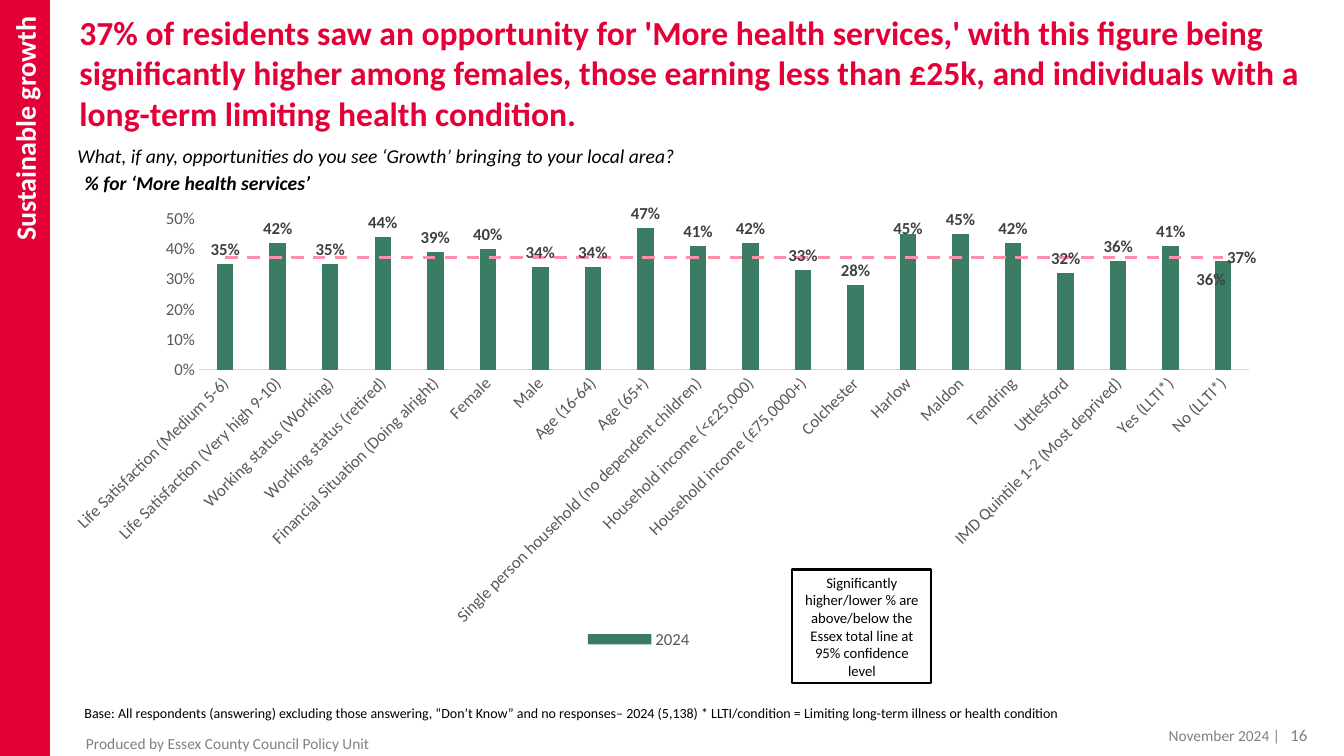
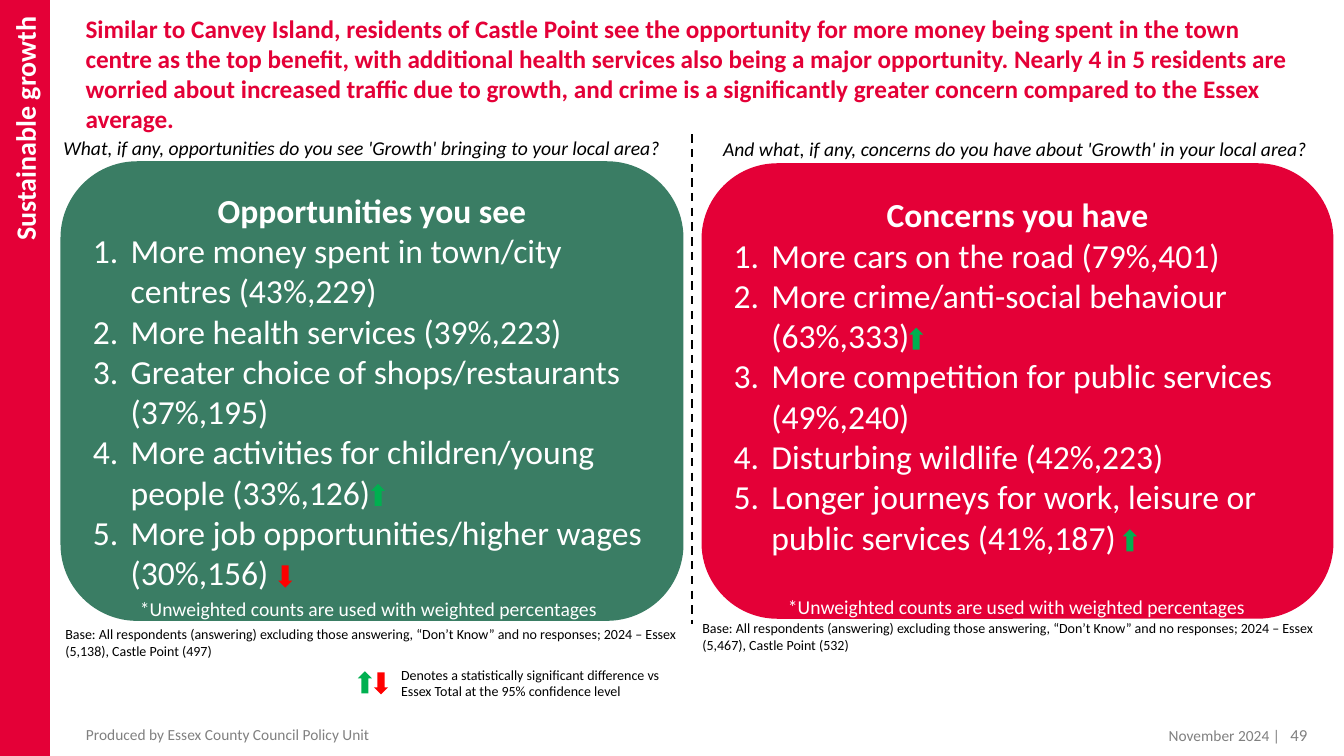
import pptx
import pptx.util
import pptx.chart.data
import pptx.dml.color
import pptx.enum.chart
import pptx.enum.dml
import pptx.enum.shapes
import pptx.enum.text
import pptx.oxml
import pptx.oxml.ns

Pt = pptx.util.Pt
RGB = pptx.dml.color.RGBColor.from_string
qn = pptx.oxml.ns.qn
MSO = pptx.enum.shapes.MSO_SHAPE
ALIGN = pptx.enum.text.PP_ALIGN
ANCHOR = pptx.enum.text.MSO_ANCHOR
LABEL = pptx.enum.chart.XL_LABEL_POSITION
TICK = pptx.enum.chart.XL_TICK_MARK
DASH = pptx.enum.dml.MSO_LINE.DASH


class Theme:
    font = "Calibri"
    red, green, pink = "E40037", "3A7D64", "FF8EA9"
    up, down = "00B050", "FF0000"
    black, white, grey = "000000", "FFFFFF", "808080"
    axis, value, rule = "595959", "404040", "D9D9D9"
    heading, long_heading, band, panel = 24, 18, 20, 24
    question, chart, footer, page, note, small = 14, 12, 11, 12, 10.5, 10


def put(s, at, kind=None, fill=None, line=None, width=1):
    """Add a text box, or a preset shape when a kind is given."""
    box = [Pt(v) for v in at]
    if kind is None:
        return s.shapes.add_textbox(*box)
    sp = s.shapes.add_shape(kind, *box)
    sp.shadow.inherit = False
    if fill:
        sp.fill.solid()
        sp.fill.fore_color.rgb = RGB(fill)
    else:
        sp.fill.background()
    if line:
        sp.line.color.rgb = RGB(line)
        sp.line.width = Pt(width)
    else:
        sp.line.fill.background()
    return sp


def write(sp, text, size, color=Theme.black, bold=False, italic=False,
          align=ALIGN.LEFT, anchor=ANCHOR.TOP, ins=(7.2, 3.6, 7.2, 3.6)):
    tf = sp.text_frame
    tf.word_wrap = True
    tf.vertical_anchor = anchor
    tf.margin_left, tf.margin_top, tf.margin_right, tf.margin_bottom = map(Pt, ins)
    tf.text = text
    for p in tf.paragraphs:
        p.alignment = align
        for r in p.runs:
            r.font.name, r.font.size = Theme.font, Pt(size)
            r.font.color.rgb = RGB(color)
            r.font.bold, r.font.italic = bold, italic
    return tf


prs = pptx.Presentation()
prs.slide_width, prs.slide_height = Pt(960), Pt(540)

# Shared parts: heading, side band, footers
pages = [
    ("37% of residents saw an opportunity for 'More health services,' with this figure being "
     "significantly higher among females, those earning less than £25k, and individuals with a "
     "long-term limiting health condition.",
     (49.7, 5, 904.3, 71.3), Theme.heading, 525.6, "16"),
    ("Similar to Canvey Island, residents of Castle Point see the opportunity for more money being "
     "spent in the town centre as the top benefit, with additional health services also being a "
     "major opportunity. Nearly 4 in 5 residents are worried about increased traffic due to growth, "
     "and crime is a significantly greater concern compared to the Essex average.",
     (54, 5.8, 882, 81.4), Theme.long_heading, 519.1, "49"),
]
for heading, at, size, producer_top, number in pages:
    s = prs.slides.add_slide(prs.slide_layouts[6])
    write(put(s, at), heading, size, Theme.red, bold=True, ins=(7.2, 3.6, 7.2, 0))
    band = put(s, (0, 0, 35.3, 540), MSO.RECTANGLE, Theme.red, Theme.red)
    tf = write(band, "Sustainable growth ", Theme.band, Theme.white, bold=True,
               align=ALIGN.RIGHT, anchor=ANCHOR.MIDDLE, ins=(7.2, 7.2, 7.2, 3.6))
    tf._txBody.bodyPr.set("vert", "vert270")
    write(put(s, (61.4, producer_top, 464, 10.8)), "Produced by Essex County Council Policy Unit",
          Theme.footer, Theme.grey, anchor=ANCHOR.MIDDLE, ins=(0, 3.6, 7.2, 3.6))
    write(put(s, (748.7, 514.8, 172.8, 10.8)), "November 2024 |", Theme.footer, Theme.grey,
          align=ALIGN.RIGHT)
    write(put(s, (872.6, 519.1, 61.2, 10.8)), number, Theme.page, Theme.grey,
          align=ALIGN.RIGHT, anchor=ANCHOR.MIDDLE, ins=(7.2, 3.6, 0, 3.6))

# Slide 1: question, base and significance note
s = prs.slides[0]
write(put(s, (48.2, 99.4, 869, 24.5)),
      "What, if any, opportunities do you see ‘Growth’ bringing to your local area?",
      Theme.question, italic=True)
write(put(s, (53.3, 118.8, 432.7, 24.5)), "% for ‘More health services’",
      Theme.question, bold=True, italic=True)
write(put(s, (53.3, 499.7, 770.4, 19.4)),
      "Base: All respondents (answering) excluding those answering, “Don’t Know” and no responses– "
      "2024 (5,138) * LLTI/condition = Limiting long-term illness or health condition", Theme.small)

# Slide 1: columns by group
groups = [
    ("Life Satisfaction (Medium 5-6)", 0.35), ("Life Satisfaction (Very high 9-10)", 0.42),
    ("Working status (Working)", 0.35), ("Working status (retired)", 0.44),
    ("Financial Situation (Doing alright)", 0.39), ("Female", 0.40), ("Male", 0.34),
    ("Age (16-64)", 0.34), ("Age (65+)", 0.47),
    ("Single person household (no dependent children)", 0.41),
    ("Household income (<£25,000)", 0.42), ("Household income (£75,0000+)", 0.33),
    ("Colchester", 0.28), ("Harlow", 0.45), ("Maldon", 0.45), ("Tendring", 0.42),
    ("Uttlesford", 0.32), ("IMD Quintile 1-2 (Most deprived)", 0.36),
    ("Yes (LLTI*)", 0.41), ("No (LLTI*)", 0.36),
]
last = len(groups) - 1
data = pptx.chart.data.CategoryChartData(number_format="0%")
data.categories = [name for name, _ in groups]
data.add_series("2024", [share for _, share in groups])
data.add_series("Essex Total", [0.37] * len(groups))
chart = s.shapes.add_chart(pptx.enum.chart.XL_CHART_TYPE.COLUMN_CLUSTERED,
                           Pt(37.4), Pt(142.6), Pt(872.6), Pt(337.7), data).chart
chart.has_title = False
chart.font.name, chart.font.size = Theme.font, Pt(Theme.chart)
chart.font.color.rgb = RGB(Theme.axis)

cat, val = chart.category_axis, chart.value_axis
cat.major_tick_mark = val.major_tick_mark = TICK.NONE
cat.format.line.color.rgb = RGB(Theme.rule)
cat.format.line.width = Pt(0.75)
cat.tick_labels.font.size = Pt(Theme.chart)
cat._element.find(qn("c:txPr")).find(qn("a:bodyPr")).set("rot", "-2700000")
val.has_major_gridlines = False
val.format.line.fill.background()
val.minimum_scale, val.maximum_scale, val.major_unit = 0, 0.5, 0.1
val.tick_labels.number_format = "0%"
val.tick_labels.number_format_is_linked = False

plot = chart.plots[0]
plot.gap_width = 219
plot.vary_by_categories = False

# Slide 1: the Essex total becomes a line on the same axes
bar = plot._element
line = pptx.oxml.parse_xml(
    '<c:lineChart xmlns:c="http://schemas.openxmlformats.org/drawingml/2006/chart">'
    '<c:grouping val="standard"/><c:varyColors val="0"/><c:marker val="1"/></c:lineChart>')
ser = bar.findall(qn("c:ser"))[1]
for flag in ser.findall(qn("c:invertIfNegative")):
    ser.remove(flag)
line.insert(2, ser)
for ax in bar.findall(qn("c:axId")):
    line.append(pptx.oxml.parse_xml(
        '<c:axId xmlns:c="http://schemas.openxmlformats.org/drawingml/2006/chart" val="%s"/>'
        % ax.get("val")))
bar.addnext(line)

columns, total = chart.plots[0].series[0], chart.plots[1].series[0]
columns.format.fill.solid()
columns.format.fill.fore_color.rgb = RGB(Theme.green)
total.smooth = False
total.marker.style = pptx.enum.chart.XL_MARKER_STYLE.NONE
total.format.line.color.rgb = RGB(Theme.pink)
total.format.line.width = Pt(2.25)
total.format.line.dash_style = DASH

# Slide 1: value labels
columns.data_labels.show_value = True
columns.data_labels.number_format = "0%"
columns.data_labels.number_format_is_linked = False
total.data_labels.show_value = False
harlow, no_llti = (columns.points[i].data_label for i in (13, last))
essex = total.points[last].data_label
for label, place in ((columns.data_labels, LABEL.OUTSIDE_END), (harlow, LABEL.OUTSIDE_END),
                     (no_llti, LABEL.OUTSIDE_END), (essex, LABEL.RIGHT)):
    label.position = place
    label.font.name, label.font.size = Theme.font, Pt(Theme.chart)
    label.font.bold = True
    label.font.color.rgb = RGB(Theme.value)

# Slide 1: legend without the total, and fixed places inside the chart
chart.has_legend = True
legend = chart.legend
legend.position = pptx.enum.chart.XL_LEGEND_POSITION.BOTTOM
legend.include_in_layout = False
legend.font.size = Pt(Theme.chart)
legend.font.color.rgb = RGB(Theme.axis)
legend._element.find(qn("c:legendPos")).addnext(pptx.oxml.parse_xml(
    '<c:legendEntry xmlns:c="http://schemas.openxmlformats.org/drawingml/2006/chart">'
    '<c:idx val="1"/><c:delete val="1"/></c:legendEntry>'))
edge = [("xMode", "edge"), ("yMode", "edge")]
moved = {lbl.find(qn("c:idx")).get("val"): lbl for lbl in columns._element.iter(qn("c:dLbl"))}
for parent, index, settings in (
        (bar.getparent(), 0, [("layoutTarget", "inner")] + edge
         + [("x", 0.12), ("y", 0.04), ("w", 0.86), ("h", 0.32)]),
        (legend._element, 2, edge + [("x", 0.43), ("y", 0.9), ("w", 0.1), ("h", 0.06)]),
        (moved["13"], 1, [("x", 0), ("y", 0.02)]),
        (moved[str(last)], 1, [("x", -0.01), ("y", 0.07)])):
    for old in parent.findall(qn("c:layout")):
        parent.remove(old)
    parent.insert(index, pptx.oxml.parse_xml(
        '<c:layout xmlns:c="http://schemas.openxmlformats.org/drawingml/2006/chart">'
        "<c:manualLayout>%s</c:manualLayout></c:layout>"
        % "".join('<c:%s val="%s"/>' % pair for pair in settings)))

note = put(s, (565.9, 406.8, 99.4, 81.4), MSO.RECTANGLE, line=Theme.black, width=1.5)
write(note, "Significantly higher/lower % are above/below the Essex total line at 95% confidence level",
      Theme.note, align=ALIGN.CENTER, anchor=ANCHOR.MIDDLE)

# Slide 2: divider
s = prs.slides[1]
divider = s.shapes.add_connector(pptx.enum.shapes.MSO_CONNECTOR.STRAIGHT,
                                 Pt(494.6), Pt(95.8), Pt(494.6), Pt(445.7))
divider.line.color.rgb = RGB(Theme.black)
divider.line.width = Pt(1.5)
divider.line.dash_style = DASH
divider._element.spPr.append(pptx.oxml.parse_xml(
    '<a:effectLst xmlns:a="http://schemas.openxmlformats.org/drawingml/2006/main"/>'))

# Slide 2: one panel each for opportunities and concerns
base = ("Base: All respondents (answering) excluding those answering, “Don’t Know” and no responses; "
        "2024 – Essex ")
panels = [
    ("What, if any, opportunities do you see 'Growth' bringing to your local area?", (38.2, 93.6),
     (43.2, 115.2, 445, 328.3), Theme.green, 3.6,
     ["Opportunities you see", "More money spent in town/city centres (43%,229)",
      "More health services (39%,223)", "Greater choice of shops/restaurants (37%,195)",
      "More activities for children/young people (33%,126)",
      "More job opportunities/higher wages (30%,156)"],
     (92.9, 422.6), "(5,138), Castle Point (497)", (39.6, 443.5)),
    ("And what, if any, concerns do you have about 'Growth' in your local area?", (509.4, 94.3),
     (501.1, 116.6, 451.4, 325.4), Theme.red, 25.6,
     ["Concerns you have", "More cars on the road (79%,401)",
      "More crime/anti-social behaviour (63%,333)",
      "More competition for public services (49%,240)", "Disturbing wildlife (42%,223)",
      "Longer journeys for work, leisure or public services (41%,187)"],
     (555.8, 421.2), "(5,467), Castle Point (532)", (494.6, 439.2)),
]
for question, q_at, at, fill, bottom, lines, count_at, sizes, base_at in panels:
    write(put(s, (*q_at, 446, 24.5)), question, Theme.question, italic=True)
    tf = write(put(s, at, MSO.ROUNDED_RECTANGLE, fill), "\n".join(lines), Theme.panel, Theme.white,
               anchor=ANCHOR.MIDDLE, ins=(7.2, 3.6, 7.2, bottom))
    title, *items = tf.paragraphs
    title.alignment = ALIGN.CENTER
    title.runs[0].font.bold = True
    for p in items:
        pPr = p._p.get_or_add_pPr()
        pPr.set("marL", str(Pt(27)))
        pPr.set("indent", str(-Pt(27)))
        pPr.append(pptx.oxml.parse_xml(
            '<a:buAutoNum xmlns:a="http://schemas.openxmlformats.org/drawingml/2006/main"'
            ' type="arabicPeriod"/>'))
    write(put(s, (*count_at, 380, 24.5)), "*Unweighted counts are used with weighted percentages",
          Theme.question, Theme.white)
    write(put(s, (*base_at, 457.2, 31.7)), base + sizes, Theme.small)

# Slide 2: significance arrows and their key
write(put(s, (279.4, 472.3, 218.9, 31.7)),
      "Denotes a statistically significant difference vs Essex Total at the 95% confidence level",
      Theme.small)
for kind, color, spots in (
        (MSO.UP_ARROW, Theme.up, [(255.6, 479.5), (649.4, 234), (802.1, 378), (265, 345.6)]),
        (MSO.DOWN_ARROW, Theme.down, [(267.1, 480.2), (198.7, 403.9)])):
    for x, y in spots:
        put(s, (x, y, 10.1, 15.8), kind, color)

prs.save("out.pptx")
